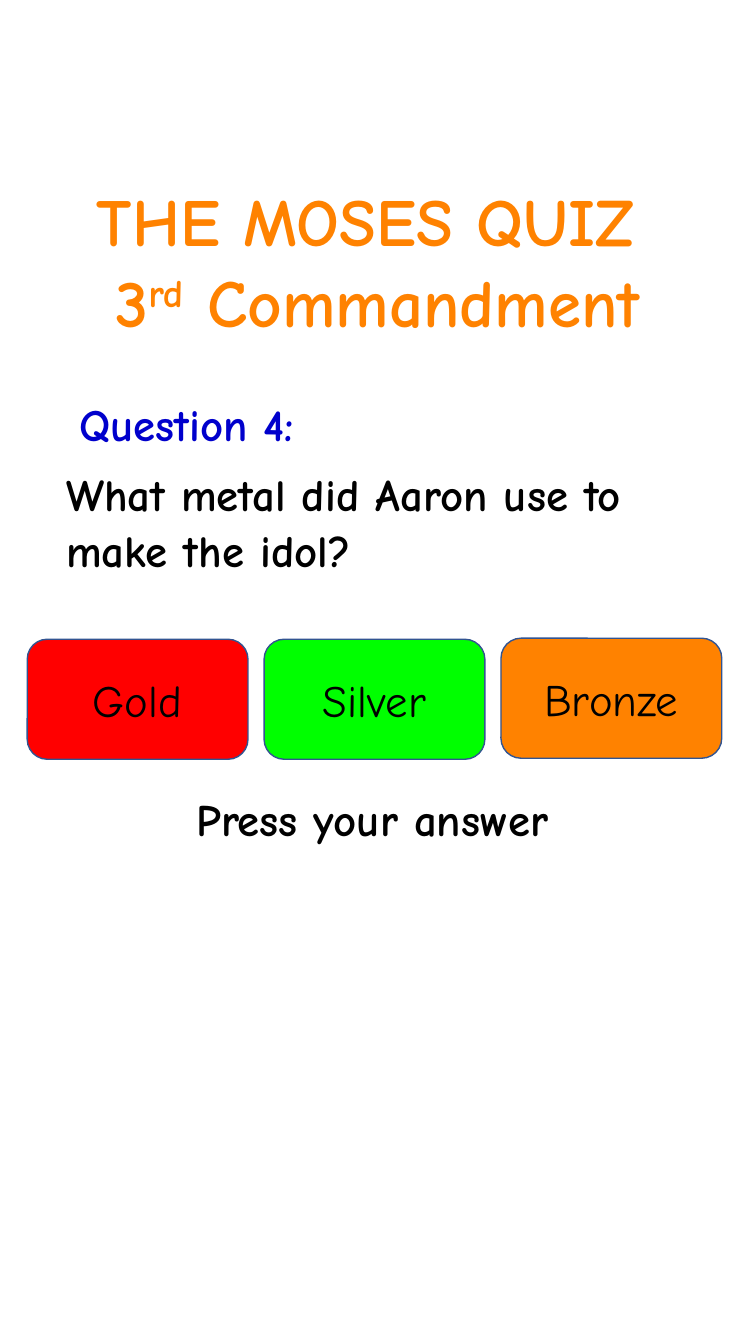
from dataclasses import dataclass

from pptx import Presentation
from pptx import util as u
from pptx.dml.color import RGBColor
from pptx.enum import shapes, text

EMU_PER_PX = 9144  # 100 px to the inch
CENTER, LEFT = text.PP_ALIGN.CENTER, text.PP_ALIGN.LEFT


@dataclass(frozen=True)
class Theme:
    font: str = "Comic Neue"
    title_size: int = 48
    body_size: int = 32
    ink: str = "000000"
    orange: str = "FF8200"
    blue: str = "0000CC"
    red: str = "FF0000"
    green: str = "00FF00"
    outline: str = "325491"


THEME = Theme()


def px(*lengths):
    return [u.Emu(length * EMU_PER_PX) for length in lengths]


def style(paragraph, color=THEME.ink, size=THEME.body_size, bold=True, align=CENTER):
    paragraph.alignment = align
    font = paragraph.font
    font.name, font.size, font.bold = THEME.font, u.Pt(size), bold
    font.color.rgb = RGBColor.from_string(color)


def add_text(slide, box, lines, wrap=False, line_spacing=None, space_before=0, **look):
    """Add a text box; each line is a list of (words, is_superscript) runs."""
    frame = slide.shapes.add_textbox(*px(*box)).text_frame
    frame.word_wrap = wrap
    for index, runs in enumerate(lines):
        paragraph = frame.add_paragraph() if index else frame.paragraphs[0]
        paragraph.line_spacing = line_spacing
        paragraph.space_before = u.Pt(space_before)
        style(paragraph, **look)
        for words, is_superscript in runs:
            run = paragraph.add_run()
            run.text = words
            if is_superscript:
                run.font._element.set("baseline", "30000")


def add_answer(slide, box, answer, color):
    button = slide.shapes.add_shape(shapes.MSO_SHAPE.ROUNDED_RECTANGLE, *px(*box))
    button.shadow.inherit = False
    button.fill.solid()
    button.fill.fore_color.rgb = RGBColor.from_string(color)
    button.line.color.rgb = RGBColor.from_string(THEME.outline)
    button.line.width = u.Pt(1)
    frame = button.text_frame
    frame.vertical_anchor = text.MSO_ANCHOR.MIDDLE
    frame.text = answer
    style(frame.paragraphs[0], bold=False)


def main():
    deck = Presentation()
    deck.slide_width, deck.slide_height = px(750, 1333)
    slide = deck.slides.add_slide(deck.slide_layouts[6])

    add_text(slide, (30, 173, 689, 172),
             [[("THE MOSES QUIZ ", False)],
              [("3", False), ("rd", True), (" Commandment", False)]],
             color=THEME.orange, size=THEME.title_size)
    add_text(slide, (47, 389, 277, 64), [[("Question 4:", False)]], color=THEME.blue)
    add_text(slide, (56, 456, 636, 146),
             [[("What metal did Aaron use to make the idol?", False)]],
             wrap=True, line_spacing=u.Pt(40), space_before=7.5, align=LEFT)
    add_text(slide, (185, 786, 422, 72), [[("Press your answer", False)]],
             wrap=True, line_spacing=0.9, space_before=7.5, align=LEFT)

    answers = [("Gold", THEME.red, 634), ("Silver", THEME.green, 634),
               ("Bronze", THEME.orange, 633)]
    for column, (answer, color, top) in enumerate(answers):
        add_answer(slide, (27 + 235 * column, top, 219, 119), answer, color)

    deck.save("out.pptx")


if __name__ == "__main__":
    main()
